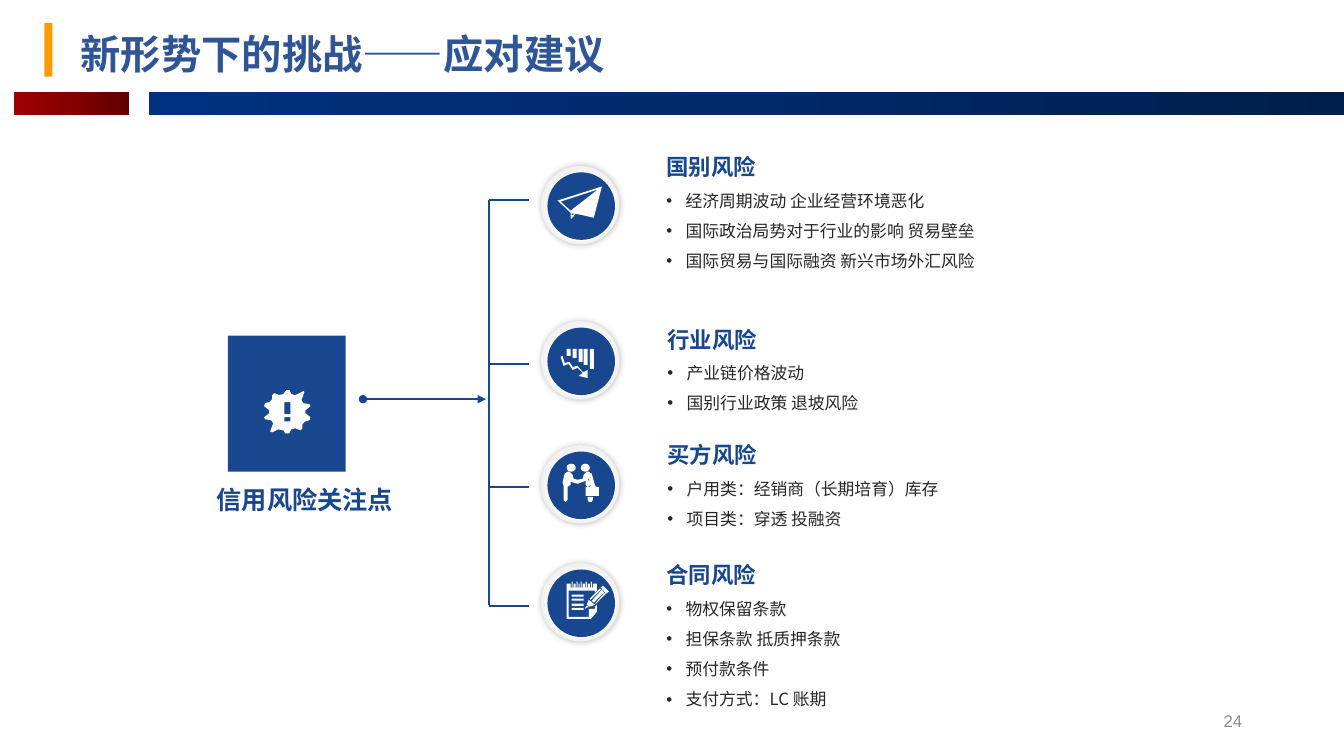
from pptx import Presentation
from pptx.dml.color import RGBColor
from pptx.enum.shapes import MSO_CONNECTOR as CONN, MSO_SHAPE as SHAPE
from pptx.enum.text import MSO_ANCHOR as ANCHOR, MSO_AUTO_SIZE as AUTO, PP_ALIGN as ALIGN
from pptx.oxml import parse_xml
from pptx.oxml.ns import nsdecls, qn
from pptx.util import Inches, Pt

NAVY = RGBColor(0x18, 0x47, 0x8F)
TITLE_BLUE = RGBColor(0x2F, 0x55, 0x97)
TEXT = RGBColor(0x26, 0x26, 0x26)
GREY = RGBColor(0x8C, 0x8C, 0x8C)
ORANGE = RGBColor(0xFF, 0x99, 0x00)
WHITE = RGBColor(0xFF, 0xFF, 0xFF)
PALE = RGBColor(0xF2, 0xF2, 0xF2)
REDS = [RGBColor(0x5E, 0, 0), RGBColor(0x85, 0, 0), RGBColor(0x9E, 0, 0)]
BLUES = [RGBColor(0, 0x1E, 0x4B), RGBColor(0, 0x2A, 0x6B), RGBColor(0, 0x32, 0x7F)]

CJK = "Noto Sans CJK SC"
TITLE = {"name": "Montserrat", "size": Pt(28.8), "bold": True}
HEADING = {"name": CJK, "size": Pt(16), "bold": True}
BULLET = {"name": CJK, "size": Pt(12), "bold": False}
LABEL = {"name": CJK, "size": Pt(18), "bold": True}
NUMBER = {"name": "Arial", "size": Pt(12), "bold": False}

# Each risk: box, heading spacing, badge top, branch height, heading, points
RISKS = [
    ((6.51, 1.34, 5.37, 1.41), 1.5, 1.66, 1.98, "国别风险",
     ["经济周期波动 企业经营环境恶化", "国际政治局势对于行业的影响 贸易壁垒",
      "国际贸易与国际融资 新兴市场外汇风险"]),
    ((6.52, 3.05, 4.17, 1.11), 1.5, 3.2, 3.61, "行业风险",
     ["产业链价格波动", "国别行业政策 退坡风险"]),
    ((6.52, 4.33, 5.37, 0.97), 1.0, 4.43, 4.83, "买方风险",
     ["户用类：经销商（长期培育）库存", "项目类：穿透 投融资"]),
    ((6.51, 5.52, 3.66, 1.58), 1.0, 5.6, 6.01, "合同风险",
     ["物权保留条款", "担保条款 抵质押条款", "预付款条件", "支付方式：LC 账期"]),
]


def rect(x1, y1, x2, y2):
    return [(x1, y1), (x2, y1), (x2, y2), (x1, y2)]


# Icon outlines, in hundredths of an inch
PLANE = [
    [(597, 185), (553, 199), (566, 211), (566, 217), (567, 217), (571, 212), (589, 216)],
    [(567, 214), (567, 212), (570, 212)],
    [(566, 209), (556, 200), (593, 188)],
]
FALLING = [
    [(568, 364), (573, 363), (578, 369), (579, 369), (583, 367), (583, 375), (574, 373),
     (578, 370), (573, 365), (568, 367), (564, 361), (559, 363), (556, 354), (558, 353),
     (560, 360), (565, 359)],
] + [rect(x, 346, x + 4, bottom) for x, bottom in
     [(562, 353), (568, 355), (573.5, 359), (579, 362), (585, 366)]]
HANDSHAKE = [
    [(591, 483), (590, 481), (587, 470), (584, 468), (582, 468), (579, 471), (578, 475),
     (573, 476), (569, 475), (568, 471), (565, 468), (563, 468), (560, 470), (557.5, 479),
     (559, 482), (559, 496), (561, 498), (563, 496), (563, 483), (566, 481), (566, 478),
     (573, 480), (581, 477), (581, 481), (583, 483), (586, 481), (583, 475), (584, 475),
     (586, 482), (585, 483), (581, 483), (581, 492), (594, 492), (594, 483)],
    [(583, 493), (583, 496), (584, 498), (587, 498), (588, 496), (588, 493)],
]
BINDING = [(round(586 - 4.75 * i) + dx, y) for i in range(5) for dx, y in
           [(2, 579), (2, 583), (1, 583), (1, 577), (0, 577), (0, 583), (-1, 583), (-1, 579)]]
NOTEPAD = [
    [(590, 604), (584, 604), (584, 612), (564, 612), (564, 586), (590, 586), (590, 588),
     (592, 586), (592, 579)] + BINDING
    + [(562, 579), (562, 614), (586, 614), (592, 607), (592, 600), (590, 602)],
] + [rect(567, 590 + 4.3 * i, 579, 592 + 4.3 * i) for i in range(4)]
PENCIL = [
    [(590, 599), (591, 599), (601, 589), (600, 588)],
    [(597, 585), (587, 596), (589, 598), (599, 588)],
    [(585, 594), (586, 595), (596, 585), (595, 584)],
    [(590, 600), (584, 595), (582, 600), (585, 602)],
    [(580, 604), (584, 602), (582, 601)],
    [(598, 581), (596, 583), (601, 589), (604, 587)],
]
WARNING = [
    [(308, 414), (303, 410), (303, 407), (308, 403), (307, 401), (301, 400), (299, 397),
     (302, 389), (301, 388), (293, 392), (289, 391), (287, 387), (284, 387), (281, 391),
     (277, 392), (272, 390), (270, 392), (270, 396), (267, 399), (263, 400), (262, 403),
     (267, 407), (267, 410), (262, 414), (263, 416), (269, 417), (271, 420), (268, 428),
     (270, 429), (276, 426), (281, 427), (283, 430), (287, 430), (289, 426), (293, 425),
     (298, 427), (300, 425), (300, 421), (303, 418), (307, 417)],
    rect(282, 399, 288, 411), rect(282, 414, 288, 418),
]


def add_run(p, text, style, color):
    r = p.add_run()
    r.text = text
    for key, value in style.items():
        setattr(r.font, key, value)
    r.font.color.rgb = color
    if style["name"] == CJK:
        r.font._element.append(parse_xml(f'<a:ea {nsdecls("a")} typeface="{CJK}"/>'))


def place(sp, box):
    for key, value in zip(("left", "top", "width", "height"), box):
        setattr(sp, key, Inches(value))


def add_label(s, box, text, style, color, wrap=True, align=ALIGN.LEFT, anchor=ANCHOR.TOP):
    tf = s.shapes.add_textbox(*map(Inches, box)).text_frame
    tf.word_wrap, tf.vertical_anchor = wrap, anchor
    tf.paragraphs[0].alignment = align
    add_run(tf.paragraphs[0], text, style, color)


def add_filled(s, kind, box, color):
    sp = s.shapes.add_shape(kind, *map(Inches, box))
    sp.shadow.inherit = False
    sp.fill.solid()
    sp.fill.fore_color.rgb = color
    sp.line.fill.background()
    return sp


def set_gradient(sp, colors, angle):
    stops = "".join(f'<a:gs pos="{100000 * i // (len(colors) - 1)}"><a:srgbClr val="{c}"/></a:gs>'
                    for i, c in enumerate(colors))
    props = sp._element.spPr
    props.replace(props.find(qn("a:solidFill")), parse_xml(
        f'<a:gradFill {nsdecls("a")} rotWithShape="1"><a:gsLst>{stops}</a:gsLst>'
        f'<a:lin ang="{angle * 60000}" scaled="0"/></a:gradFill>'))


def add_line(s, x1, y1, x2, y2, arrow=False):
    line = s.shapes.add_connector(CONN.STRAIGHT, *map(Inches, (x1, y1, x2, y2)))
    line.line.color.rgb = NAVY
    line.line.width = Pt(1.5)
    if arrow:
        for tag, kind in (("headEnd", "oval"), ("tailEnd", "triangle")):
            line.line._ln.append(parse_xml(f'<a:{tag} {nsdecls("a")} type="{kind}"/>'))
    line._element.spPr.append(parse_xml(f'<a:effectLst {nsdecls("a")}/>'))


def add_icon(s, outlines):
    builder = s.shapes.build_freeform(*outlines[0][0], scale=Inches(0.01))
    for outline in outlines:
        builder.move_to(*outline[0])
        builder.add_line_segments(outline[1:], close=True)
    sp = builder.convert_to_shape()
    sp.shadow.inherit = False
    sp.fill.solid()
    sp.fill.fore_color.rgb = WHITE
    sp.line.fill.background()


def add_badge(s, top):
    ring = add_filled(s, SHAPE.OVAL, (5.38, top, 0.75, 0.75), WHITE)
    set_gradient(ring, [WHITE, PALE], 250)
    ring.line.color.rgb = PALE
    ring.line.width = Pt(2)
    ring._element.spPr.find(qn("a:effectLst")).append(parse_xml(
        f'<a:outerShdw {nsdecls("a")} blurRad="{Pt(5)}" dist="0" dir="0" algn="ctr">'
        '<a:srgbClr val="000000"><a:alpha val="26000"/></a:srgbClr></a:outerShdw>'))
    add_filled(s, SHAPE.OVAL, (5.43, top + 0.05, 0.67, 0.67), NAVY)


def fill_list(body, box, heading_spacing, heading, points):
    place(body, box)
    tf = body.text_frame
    tf.word_wrap, tf.auto_size, tf.vertical_anchor = True, AUTO.NONE, ANCHOR.TOP
    for i, text in enumerate([heading] + points):
        p = tf.paragraphs[0] if i == 0 else tf.add_paragraph()
        indent = Inches(0.19) if i else 0
        props = p._p.get_or_add_pPr()
        props.set("marL", str(indent))
        props.set("indent", str(-indent))
        for mark in ('buFont typeface="Arial"', 'buChar char="•"') if i else ("buNone",):
            props.append(parse_xml(f'<a:{mark.replace(" ", " " + nsdecls("a") + " ", 1)}/>' if i
                                   else f'<a:{mark} {nsdecls("a")}/>'))
        p.line_spacing = 1.5 if i else heading_spacing
        p.space_before = p.space_after = Pt(0)
        add_run(p, text, BULLET if i else HEADING, TEXT if i else NAVY)


def main():
    prs = Presentation()
    prs.slide_width, prs.slide_height = Inches(13.33), Inches(7.5)
    s = prs.slides.add_slide(prs.slide_layouts[4])
    title, *bodies = s.placeholders

    # Header
    add_filled(s, SHAPE.RECTANGLE, (0.44, 0.23, 0.08, 0.53), ORANGE)
    for left, width, colors in ((0.14, 1.14, REDS), (1.48, 11.85, BLUES)):
        bar = add_filled(s, SHAPE.RECTANGLE, (left, 0.91, width, 0.23), colors[0])
        set_gradient(bar, colors, 180)
    place(title, (0.7, 0.24, 10.38, 0.64))
    tf = title.text_frame
    tf.auto_size, tf.vertical_anchor = AUTO.NONE, ANCHOR.MIDDLE
    p = tf.paragraphs[0]
    p.alignment, p.line_spacing = ALIGN.LEFT, 0.9
    add_run(p, "新形势下的挑战——应对建议", TITLE, TITLE_BLUE)

    # Focus block and arrow
    add_filled(s, SHAPE.RECTANGLE, (2.26, 3.33, 1.17, 1.35), NAVY)
    add_icon(s, WARNING)
    add_label(s, (2.05, 4.76, 1.95, 0.4), "信用风险关注点", LABEL, NAVY, wrap=False)
    add_line(s, 3.6, 3.96, 4.82, 3.96, arrow=True)

    # Bracket, badges and lists
    add_line(s, 4.85, 1.98, 4.85, 6)
    for body, (box, spacing, top, branch, heading, points) in zip(bodies, RISKS):
        add_line(s, 5.25, branch, 4.85, branch)
        add_badge(s, top)
        fill_list(body, box, spacing, heading, points)

    # Badge icons
    for outlines in (PLANE, FALLING, HANDSHAKE, NOTEPAD, PENCIL):
        add_icon(s, outlines)
    for left in (5.62, 5.76):
        add_filled(s, SHAPE.OVAL, (left, 4.6, 0.09, 0.08), WHITE)

    # Page number
    add_label(s, (9.42, 6.95, 3, 0.4), "24", NUMBER, GREY, align=ALIGN.RIGHT, anchor=ANCHOR.MIDDLE)
    prs.save("out.pptx")


if __name__ == "__main__":
    main()
